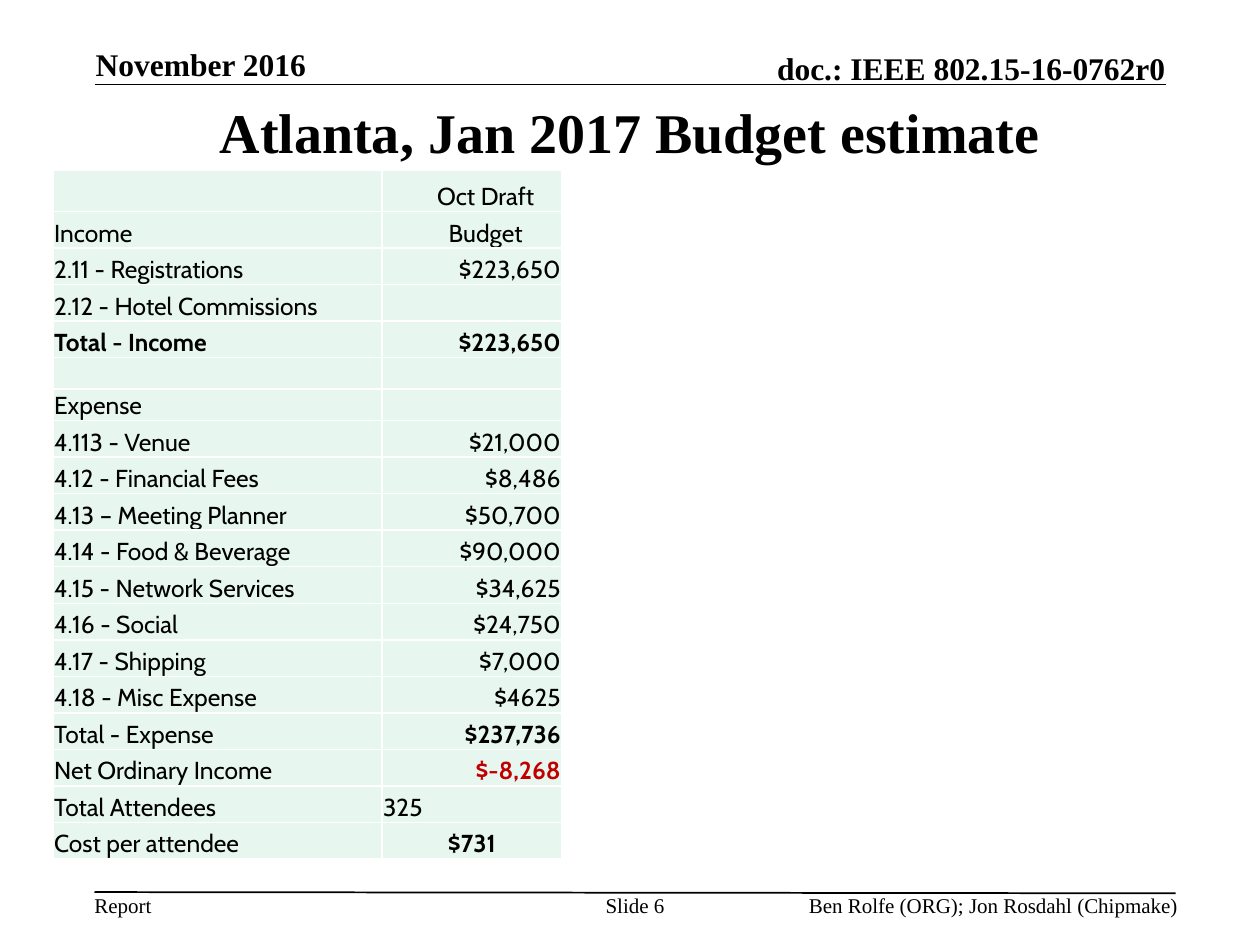
from lxml import etree
from pptx import Presentation, util as u
from pptx.dml.color import RGBColor
from pptx.enum import shapes, text
from pptx.oxml.ns import qn

BLACK = RGBColor(0x00, 0x00, 0x00)
WHITE = RGBColor(0xFF, 0xFF, 0xFF)
MINT = RGBColor(0xE7, 0xF6, 0xEF)
RED = RGBColor(0xC0, 0x00, 0x00)
SERIF = "Times New Roman"
SANS = "Cabin"
LEFT, CENTER, RIGHT = text.PP_ALIGN.LEFT, text.PP_ALIGN.CENTER, text.PP_ALIGN.RIGHT
TOP, BOTTOM = text.MSO_ANCHOR.TOP, text.MSO_ANCHOR.BOTTOM

BUDGET = [
    ("", "Oct Draft"),
    ("Income", "Budget"),
    ("2.11 - Registrations", "$223,650"),
    ("2.12 - Hotel Commissions", ""),
    ("Total - Income", "$223,650"),
    ("", ""),
    ("Expense", ""),
    ("4.113 - Venue", "$21,000"),
    ("4.12 - Financial Fees", "$8,486"),
    ("4.13 – Meeting Planner", "$50,700"),
    ("4.14 - Food & Beverage", "$90,000"),
    ("4.15 - Network Services", "$34,625"),
    ("4.16 - Social", "$24,750"),
    ("4.17 - Shipping", "$7,000"),
    ("4.18 - Misc Expense", "$4625"),
    ("Total - Expense", "$237,736"),
    ("Net Ordinary Income", "$-8,268"),
    ("Total Attendees", "325"),
    ("Cost per attendee", "$731"),
]
ROW_HEIGHT = 0.29
SPECIAL_HEIGHTS = {0: 0.33, 5: 0.25, 6: 0.25}
HEADING_ROWS = (0, 1)
VALUE_ALIGN = {0: CENTER, 1: CENTER, 17: LEFT, 18: CENTER}
BOLD_CELLS = {(4, 0), (4, 1), (15, 1), (16, 1), (18, 1)}
RED_CELLS = {(16, 1)}


def style(para, face, size, align, bold=False, color=BLACK):
    para.alignment = align
    para.font.name = face
    para.font.size = u.Pt(size)
    para.font.bold = bold
    para.font.color.rgb = color


def add_label(page, box, words, size, align=LEFT, bold=False, anchor=TOP, wrap=True):
    frame = page.shapes.add_textbox(*map(u.Inches, box)).text_frame
    frame.margin_left = frame.margin_right = frame.margin_top = frame.margin_bottom = 0
    frame.word_wrap = wrap
    frame.vertical_anchor = anchor
    para = frame.paragraphs[0]
    para.text = words
    style(para, SERIF, size, align, bold)


def add_rule(page, start, end):
    rule = page.shapes.add_connector(
        shapes.MSO_CONNECTOR.STRAIGHT, *map(u.Inches, start + end))
    rule.line.color.rgb = BLACK
    rule.line.width = u.Pt(1)
    etree.SubElement(rule._element.spPr, qn("a:effectLst"))


def add_header(page, box):
    left, top, width, height = box
    bottom = top + height
    add_rule(page, (left, bottom), (left + width, bottom))
    add_label(page, (left + 0.01, top, 2.05, 0.3), "November 2016",
              18, bold=True, anchor=BOTTOM)
    add_label(page, (left + width - 5.33, top + 0.03, 5.33, 0.3),
              "doc.: IEEE 802.15-16-0762r0", 18, RIGHT, True, BOTTOM)


def add_title(page, box):
    title = page.shapes.title
    title.left, title.top, title.width, title.height = map(u.Inches, box)
    title.text_frame.vertical_anchor = text.MSO_ANCHOR.MIDDLE
    para = title.text_frame.paragraphs[0]
    para.text = "Atlanta, Jan 2017 Budget estimate"
    style(para, SERIF, 32, CENTER, True)


def add_footer(page, box):
    left, top, width, height = box
    add_rule(page, (left, top), (left + width, top + 0.01))
    add_label(page, (left, top, 0.46, height), "Report", 12, wrap=False)
    add_label(page, (left + 4, top, 0.58, height), "Slide 6", 12, CENTER)
    add_label(page, (left + width - 3.16, top, 3.18, height),
              "Ben Rolfe (ORG); Jon Rosdahl (Chipmake)", 12, RIGHT)


def add_borders(cell):
    properties = cell._tc.get_or_add_tcPr()
    for side in ("lnL", "lnR", "lnT", "lnB"):
        line = etree.SubElement(properties, qn(f"a:{side}"), w=str(u.Pt(1)))
        fill = etree.SubElement(line, qn("a:solidFill"))
        etree.SubElement(fill, qn("a:srgbClr"), val=str(WHITE))


def fill_cell(cell, words, row, column):
    add_borders(cell)
    cell.fill.solid()
    cell.fill.fore_color.rgb = MINT
    cell.vertical_anchor = BOTTOM
    cell.margin_left = cell.margin_right = cell.margin_top = u.Inches(0.01)
    cell.margin_bottom = 0
    para = cell.text_frame.paragraphs[0]
    if not words:
        etree.SubElement(para._p, qn("a:endParaRPr"), sz="1200")
        return
    if column == 1 and row in HEADING_ROWS:
        cell.margin_left = u.Inches(0.23)
    para.text = words
    style(para, SANS, 14,
          VALUE_ALIGN.get(row, RIGHT) if column else LEFT,
          (row, column) in BOLD_CELLS,
          RED if (row, column) in RED_CELLS else BLACK)


def add_budget(page, box):
    table = page.shapes.add_table(len(BUDGET), 2, *map(u.Inches, box)).table
    table.first_row = table.horz_banding = False
    for column, width in zip(table.columns, (2.61, 1.43)):
        column.width = u.Inches(width)
    for row, entries in enumerate(BUDGET):
        table.rows[row].height = u.Inches(SPECIAL_HEIGHTS.get(row, ROW_HEIGHT))
        for column, words in enumerate(entries):
            fill_cell(table.cell(row, column), words, row, column)


def main():
    deck = Presentation()
    deck.slide_width, deck.slide_height = u.Inches(10), u.Inches(7.5)
    page = deck.slides.add_slide(deck.slide_layouts.get_by_name("Title Only"))
    add_header(page, (0.75, 0.36, 8.5, 0.31))
    add_title(page, (0.75, 0.75, 8.5, 0.58))
    add_budget(page, (0.42, 1.35, 4.04, 5.49))
    add_footer(page, (0.75, 7.08, 8.58, 0.25))
    deck.save("out.pptx")


if __name__ == "__main__":
    main()
